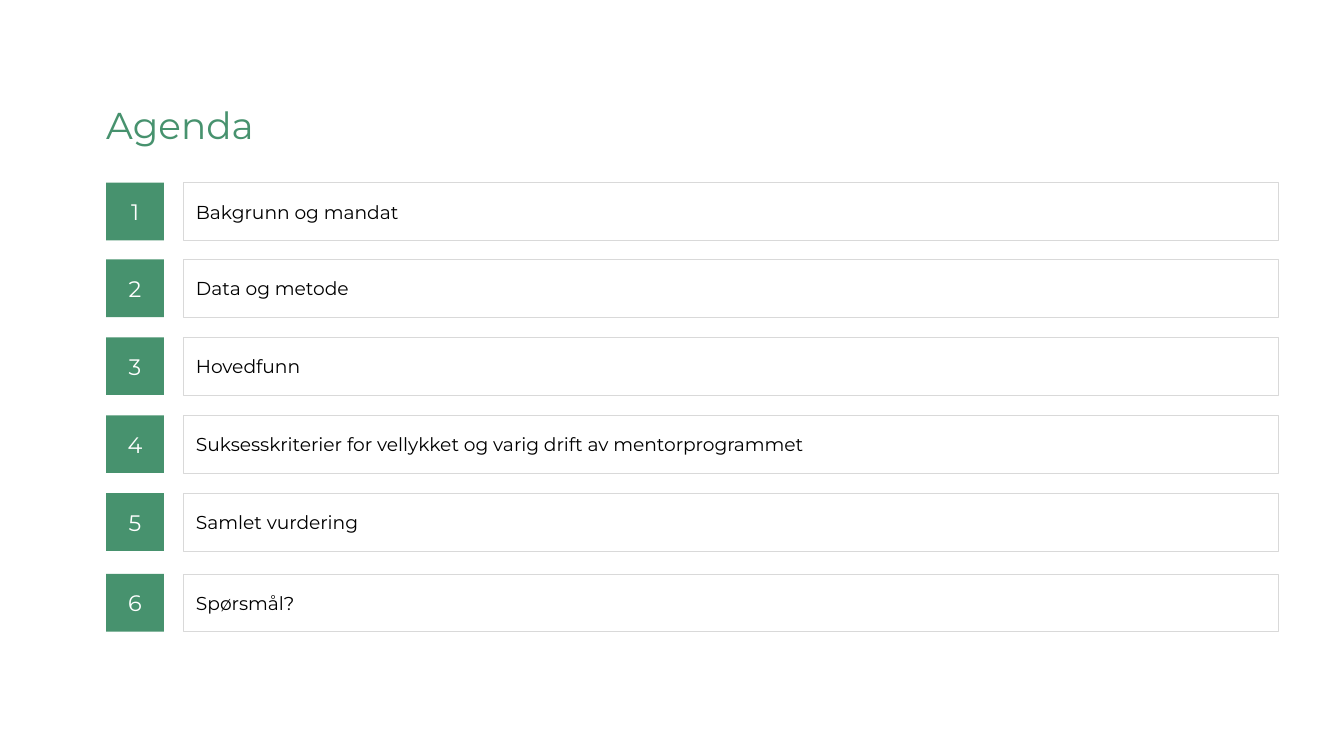
"""Build the agenda slide with six numbered rows."""
from dataclasses import dataclass

from pptx import Presentation
from pptx.dml.color import RGBColor
from pptx.enum.shapes import MSO_SHAPE
from pptx.enum.text import MSO_ANCHOR, PP_ALIGN
from pptx.util import Inches, Pt


@dataclass(frozen=True)
class Theme:
    font: str = "Montserrat"
    green: RGBColor = RGBColor(0x47, 0x92, 0x6E)
    white: RGBColor = RGBColor(0xFF, 0xFF, 0xFF)
    black: RGBColor = RGBColor(0x00, 0x00, 0x00)
    border: RGBColor = RGBColor(0xD9, 0xD9, 0xD9)
    title_size: Pt = Pt(20)
    number_size: Pt = Pt(12)
    topic_size: Pt = Pt(10)


theme = Theme()


def add_span(para, text, size, color):
    span = para.add_run()
    span.text = text
    span.font.name = theme.font
    span.font.size = size
    span.font.color.rgb = color


def add_tile(page, left, top, width, fill, text, size, color, align):
    tile = page.shapes.add_shape(
        MSO_SHAPE.RECTANGLE, Inches(left), Inches(top), Inches(width), Inches(0.43)
    )
    tile.shadow.inherit = False
    tile.fill.solid()
    tile.fill.fore_color.rgb = fill
    tile.line.fill.background()
    frame = tile.text_frame
    frame.word_wrap = True
    frame.vertical_anchor = MSO_ANCHOR.MIDDLE
    para = frame.paragraphs[0]
    para.alignment = align
    add_span(para, text, size, color)
    return tile


deck = Presentation()
deck.slide_width = Inches(10)
deck.slide_height = Inches(10) * 9 // 16
page = deck.slides.add_slide(deck.slide_layouts[6])
page.background.fill.solid()
page.background.fill.fore_color.rgb = theme.white

title = page.shapes.add_textbox(Inches(0.79), Inches(0.73), Inches(8.82), Inches(0.43))
frame = title.text_frame
frame.word_wrap = True
frame.margin_left = frame.margin_right = frame.margin_top = frame.margin_bottom = 0
para = frame.paragraphs[0]
para.line_spacing = Pt(26)
add_span(para, "Agenda", theme.title_size, theme.green)

agenda = [
    (1.36, "Bakgrunn og mandat"),
    (1.93, "Data og metode"),
    (2.51, "Hovedfunn"),
    (3.09, "Suksesskriterier for vellykket og varig drift av mentorprogrammet"),
    (3.67, "Samlet vurdering"),
    (4.27, "Spørsmål?"),
]

for number, (top, topic) in enumerate(agenda, start=1):
    add_tile(page, 0.79, top, 0.43, theme.green, str(number),
             theme.number_size, theme.white, PP_ALIGN.CENTER)
    topic_box = add_tile(page, 1.36, top, 8.15, theme.white, topic,
                         theme.topic_size, theme.black, PP_ALIGN.LEFT)
    topic_box.line.color.rgb = theme.border
    topic_box.line.width = Pt(0.25)

deck.save("out.pptx")
